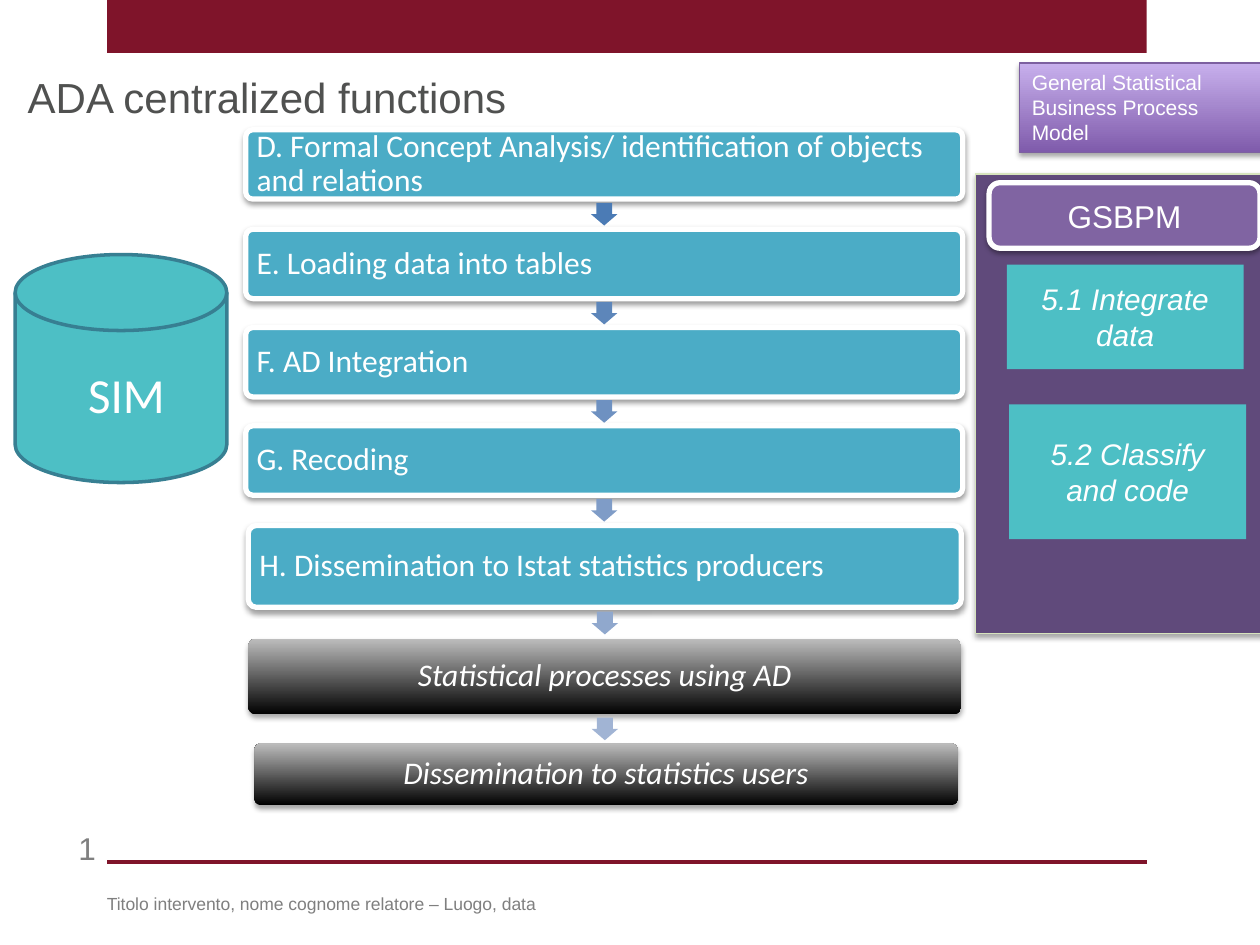
from lxml import etree
from pptx import Presentation
from pptx.dml.color import RGBColor
from pptx.enum import shapes, text
from pptx.oxml import ns
from pptx.util import Inches, Pt

HUES = {
    "wine": "7F142A", "blue": "4BACC6", "white": "FFFFFF", "black": "000000",
    "ash": "BDBDBD", "teal": "4DBFC5", "rim": "377F92", "plum": "604A7B",
    "lime": "D7E4BD", "violet": "8064A2", "grape": "7F5BAB", "lilac": "C8B0ED",
    "edge": "7D60A0", "title": "505150", "foot": "7F7F7F", "page": "808080",
}
ARROWS = ["4B7BB5", "5D86BA", "6E91C1", "7F9CC7", "90A8CD", "A1B4D4"]
STEPS = [
    ("D. Formal Concept Analysis/ identification of objects and relations",
     (1.95, 1.03, 5.69, 0.55), False),
    ("E. Loading data into tables", (1.95, 1.82, 5.69, 0.55), False),
    ("F. AD Integration", (1.95, 2.6, 5.69, 0.55), False),
    ("G. Recoding", (1.95, 3.38, 5.69, 0.55), False),
    ("H. Dissemination to Istat statistics producers",
     (1.97, 4.17, 5.66, 0.65), False),
    ("Statistical processes using AD", (1.97, 5.07, 5.66, 0.6), True),
    ("Dissemination to statistics users", (2.02, 5.9, 5.58, 0.49), True),
]
KIND = shapes.MSO_SHAPE
LEFT, MID, RIGHT = (text.PP_ALIGN.LEFT, text.PP_ALIGN.CENTER,
                    text.PP_ALIGN.RIGHT)
TOP, CORE = text.MSO_ANCHOR.TOP, text.MSO_ANCHOR.MIDDLE


def rgb(name):
    return RGBColor.from_string(HUES.get(name, name))


def span(box):
    return [Inches(n) for n in box]


def shade(shape, alpha, drop):
    """Cast a soft shadow straight down; drop is in points."""
    glow = shape._element.spPr.find(ns.qn("a:effectLst"))
    cast = etree.SubElement(glow, ns.qn("a:outerShdw"), blurRad=str(Pt(3.1)),
                            dist=str(Pt(drop)), dir="5400000", rotWithShape="0")
    tint = etree.SubElement(cast, ns.qn("a:srgbClr"), val=HUES["black"])
    etree.SubElement(tint, ns.qn("a:alpha"), val=str(alpha * 1000))


def draw(slide, kind, box, fill, line=None, shadow=None):
    """Add a shape; fill is one colour or a (bottom, top) gradient pair."""
    shape = slide.shapes.add_shape(kind, *span(box))
    shape.shadow.inherit = False
    if isinstance(fill, tuple):
        shape.fill.gradient()
        shape.fill.gradient_angle = 90
        for stop, hue in zip(shape.fill.gradient_stops, fill):
            stop.color.rgb = rgb(hue)
    else:
        shape.fill.solid()
        shape.fill.fore_color.rgb = rgb(fill)
    if line:
        shape.line.color.rgb, shape.line.width = rgb(line[0]), Pt(line[1])
    else:
        shape.line.fill.background()
    if shadow:
        shade(shape, *shadow)
    return shape


def write(shape, words, size, hue="white", align=LEFT, anchor=TOP,
          face="Arial", italic=False, space=None, **inset):
    frame = shape.text_frame
    frame.text = words
    look = {"word_wrap": True, "auto_size": text.MSO_AUTO_SIZE.NONE,
            "vertical_anchor": anchor}
    look.update({f"margin_{side}": Inches(n) for side, n in inset.items()})
    para = frame.paragraphs[0]
    tasks = [(frame, look),
             (para, {"alignment": align, "line_spacing": space}),
             (para.runs[0].font, {"name": face, "size": Pt(size),
                                  "italic": italic})]
    for item, values in tasks:
        for key, value in values.items():
            setattr(item, key, value)
    para.runs[0].font.color.rgb = rgb(hue)


def label(slide, box, *args, **look):
    write(slide.shapes.add_textbox(*span(box)), *args, **look)


def rule(slide, x, y, wide):
    line = slide.shapes.add_connector(shapes.MSO_CONNECTOR.STRAIGHT,
                                      *span((x, y, x + wide, y)))
    line.line.color.rgb, line.line.width = rgb("wine"), Pt(2)
    etree.SubElement(line._element.spPr, ns.qn("a:effectLst"))


def frame(slide, box):
    """Place the top band, bottom rule, footer, page number and title."""
    x, y, wide, high = box
    draw(slide, KIND.RECTANGLE, (x, y, wide, 0.42), "wine")
    rule(slide, x, y + high, wide)
    label(slide, (x - 0.1, y + high + 0.2, 5.13, 0.27),
          "Titolo intervento, nome cognome relatore – Luogo, data", 10, "foot")
    label(slide, (x - 0.54, y + high - 0.31, 0.55, 0.4), "1", 18, "page",
          align=RIGHT)
    title = slide.shapes.title
    title.left, title.top, title.width, title.height = span(
        (x - 0.73, y + 0.52, 4.4, 0.5))
    write(title, "ADA centralized functions", 24, "title")


def step(slide, box, words, final):
    if final:
        style = {"fill": ("black", "ash"), "shadow": (35, 1.8)}
    else:
        style = {"fill": "blue", "line": ("white", 3), "shadow": (38, 1.6)}
    shape = draw(slide, KIND.ROUNDED_RECTANGLE, box, **style)
    shape.adjustments[0] = 0.1
    write(shape, words, 18, align=MID if final else LEFT, anchor=CORE,
          face="Calibri", italic=final, space=0.9,
          left=0.07, top=0.07, right=0.07, bottom=0.07)


def arrow(slide, above, below, hue):
    """Centre a downward arrow in the gap between two steps."""
    wide, high = 0.18, 0.21
    x = above[0] + above[2] / 2
    y = (above[1] + above[3] + below[1]) / 2
    shape = draw(slide, KIND.RIGHT_ARROW,
                 (x - wide / 2, y - high / 2, wide, high), hue)
    shape.rotation = 90
    shape.adjustments[0], shape.adjustments[1] = 0.6, 0.5


def flow(slide, steps):
    for words, box, final in steps:
        step(slide, box, words, final)
    boxes = [box for _, box, _ in steps]
    for above, below, hue in zip(boxes, boxes[1:], ARROWS):
        arrow(slide, above, below, hue)


def panel(slide, box):
    """Place the process model panel with its heading and two phases."""
    x, y = box[:2]
    draw(slide, KIND.RECTANGLE, box, "plum", ("lime", 0.75), (35, 1.8))
    phases = [("5.1 Integrate data", 0.25, 0.72, 0.83),
              ("5.2 Classify and code", 0.27, 1.83, 1.07)]
    for words, dx, dy, high in phases:
        phase = draw(slide, KIND.RECTANGLE, (x + dx, y + dy, 1.88, high), "teal")
        write(phase, words, 17, align=MID, anchor=CORE, italic=True)
    head = draw(slide, KIND.ROUNDED_RECTANGLE, (x + 0.11, y + 0.07, 2.15, 0.52),
                "violet", ("white", 3), (38, 1.6))
    write(head, "GSBPM", 18, align=MID, anchor=CORE)


def store(slide, box):
    disk = draw(slide, KIND.CAN, box, "teal", ("rim", 2))
    disk._element.spPr.prstGeom.set("prst", "flowChartMagneticDisk")
    write(disk, "SIM", 28, anchor=CORE, face="Calibri", left=0.58, top=0.15)


def badge(slide, box):
    shape = draw(slide, KIND.RECTANGLE, box, ("grape", "lilac"),
                 ("edge", 0.75), (35, 1.8))
    write(shape, "General Statistical Business Process Model", 12)


def main():
    deck = Presentation()
    deck.slide_width, deck.slide_height = Inches(10), Inches(7.5)
    slide = deck.slides.add_slide(deck.slide_layouts[5])
    frame(slide, (0.85, 0, 8.25, 6.84))
    flow(slide, STEPS)
    panel(slide, (7.74, 1.38, 2.37, 3.65))
    store(slide, (0.12, 2.02, 1.68, 1.81))
    badge(slide, (8.09, 0.5, 1.98, 0.71))
    deck.save("out.pptx")


if __name__ == "__main__":
    main()
